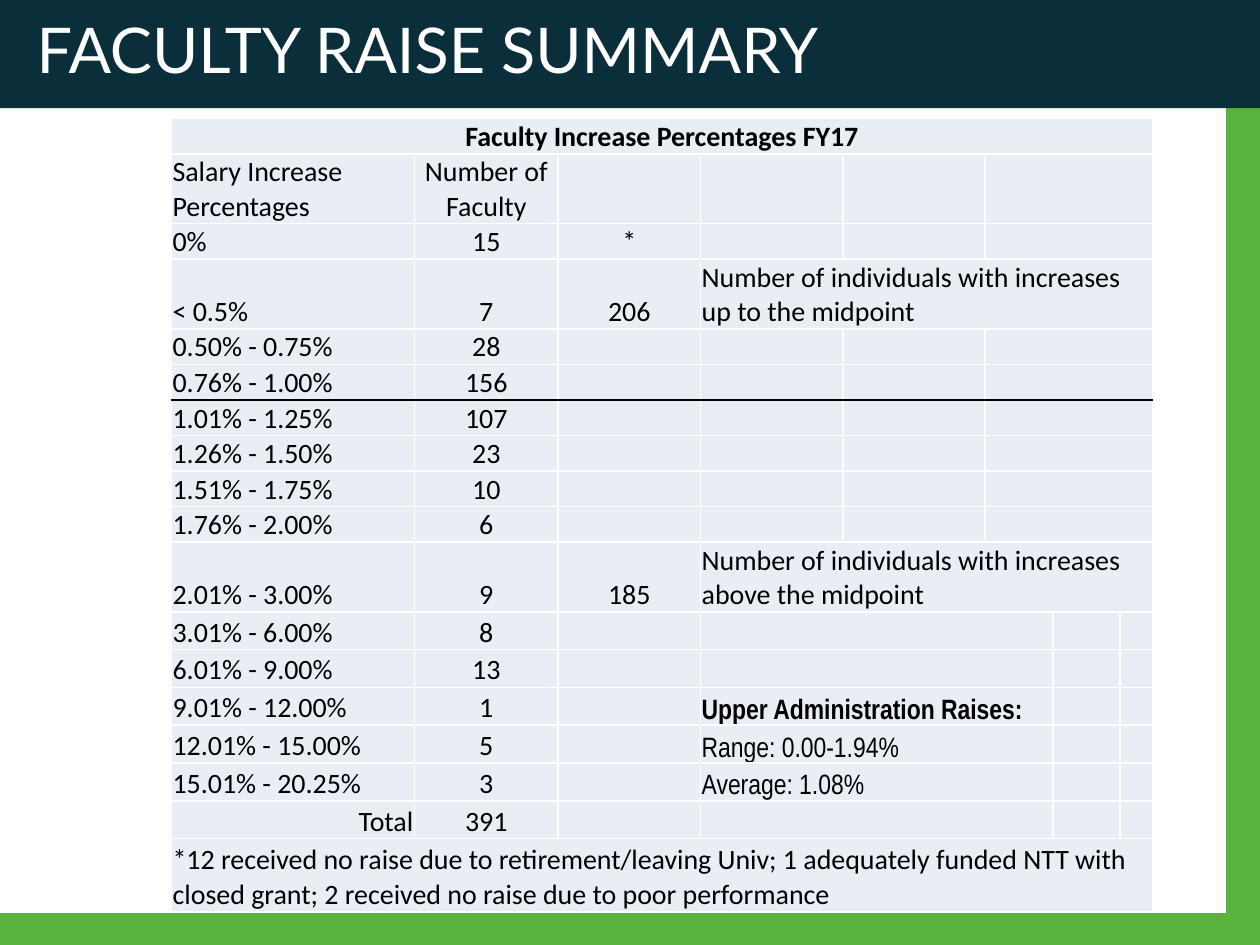
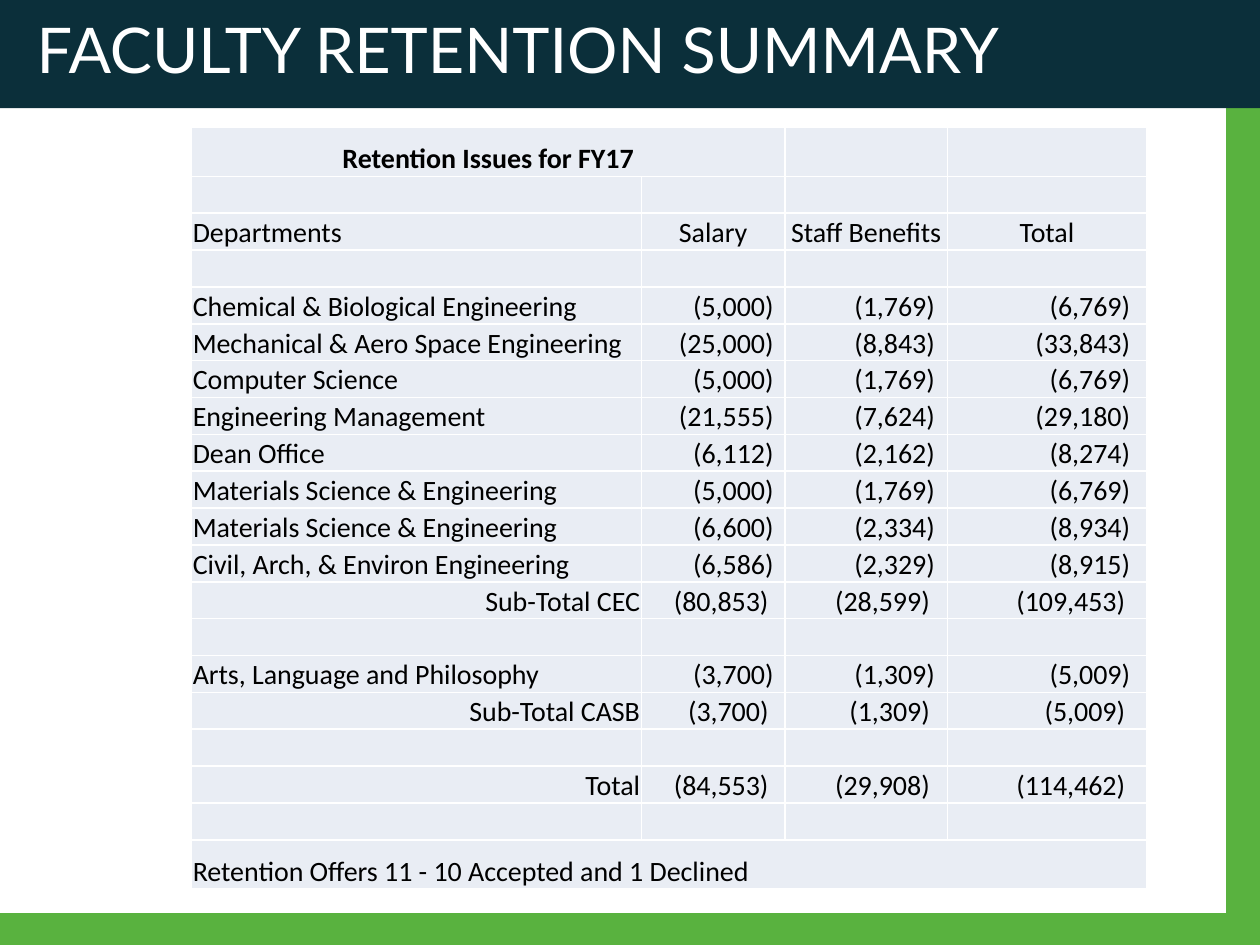
"""Build two slides of faculty raise and retention tables."""
from lxml.etree import SubElement
from pptx import Presentation
from pptx.dml.color import RGBColor
from pptx.enum.shapes import MSO_SHAPE as SHAPE
from pptx.enum.text import MSO_ANCHOR as ANCHOR, MSO_AUTO_SIZE as AUTO, PP_ALIGN as ALIGN
from pptx.oxml.ns import qn
from pptx.util import Inches, Pt

NAVY, GREEN, WHITE, BLACK, CELL = "0B2F3A", "59B23F", "FFFFFF", "000000", "E9EDF4"


def rgb(color):
    """Turn a hex string into a colour."""
    return RGBColor.from_string(color)


def add_table_slide(title, left, top, cols, heights, rows, spans, rule_row=None):
    """Add a titled slide with a table; spans maps a row to (first, last) merged columns."""
    s = prs.slides.add_slide(layout)
    sp = s.shapes.title
    sp.left, sp.top, sp.width, sp.height = (Inches(n) for n in (0.19, 0.03, 9, 1.06))
    tf = sp.text_frame
    tf.text, tf.auto_size, tf.vertical_anchor = title, AUTO.NONE, ANCHOR.TOP
    p = tf.paragraphs[0]
    p.alignment = ALIGN.LEFT
    p.font.name, p.font.size, p.font.color.rgb = "Lato", Pt(36), rgb(WHITE)

    table = s.shapes.add_table(len(rows), len(cols), Inches(left), Inches(top),
                               Inches(sum(cols)), Inches(sum(heights))).table
    table.first_row = table.horz_banding = False
    for column, width in zip(table.columns, cols):
        column.width = Inches(width)
    for r, (row, height) in enumerate(zip(rows, heights)):
        table.rows[r].height = Inches(height)
        for c in range(len(cols)):
            cell = table.cell(r, c)
            cell.margin_left = cell.margin_right = cell.margin_top = Inches(0.01)
            cell.margin_bottom = 0
            cell.vertical_anchor = ANCHOR.BOTTOM
            for side in "LRTB":
                ruled = (side, r) in (("B", rule_row), ("T", (rule_row or -2) + 1))
                ln = SubElement(cell._tc.get_or_add_tcPr(), qn(f"a:ln{side}"), w=str(Pt(1)))
                fill = SubElement(ln, qn("a:solidFill"))
                SubElement(fill, qn("a:srgbClr"), val=BLACK if ruled else WHITE)
            cell.fill.solid()
            cell.fill.fore_color.rgb = rgb(CELL)
            p = cell.text_frame.paragraphs[0]
            if c < len(row) and row[c]:
                cell.text = row[c]
                p = cell.text_frame.paragraphs[0]
                p.alignment = ALIGN.CENTER if c in (1, 2) or r == 0 else ALIGN.LEFT
                p.font.name, p.font.size, p.font.bold = "Calibri", Pt(16), r == 0
                p.font.color.rgb = rgb(BLACK)
            else:
                SubElement(p._p, qn("a:endParaRPr"), sz="1600")
        if r in spans:
            first, last = spans[r]
            table.cell(r, first).merge(table.cell(r, last))
    return s, table


prs = Presentation()
prs.slide_width, prs.slide_height = Inches(10), Inches(7.5)
layout = prs.slide_layouts[5]
for sp in list(layout.placeholders)[1:]:
    sp.element.getparent().remove(sp.element)

raises = [
    ["Faculty Increase Percentages FY17"],
    ["Salary Increase Percentages", "Number of Faculty"],
    ["0%", "15", "*"],
    ["< 0.5%", "7", "206", "Number of individuals with increases up to the midpoint"],
    ["0.50% - 0.75%", "28"],
    ["0.76% - 1.00%", "156"],
    ["1.01% - 1.25%", "107"],
    ["1.26% - 1.50%", "23"],
    ["1.51% - 1.75%", "10"],
    ["1.76% - 2.00%", "6"],
    ["2.01% - 3.00%", "9", "185", "Number of individuals with increases above the midpoint"],
    ["3.01% - 6.00%", "8"],
    ["6.01% - 9.00%", "13"],
    ["9.01% - 12.00%", "1", "", "Upper Administration Raises:"],
    ["12.01% - 15.00%", "5", "", "Range: 0.00-1.94%"],
    ["15.01% - 20.25%", "3", "", "Average: 1.08%"],
    ["Total", "391"],
    ["*12 received no raise due to retirement/leaving Univ; 1 adequately funded NTT "
     "with closed grant; 2 received no raise due to poor performance"],
]
spans = {r: (5, 7) for r in range(1, 10)}
spans |= {r: (3, 5) for r in range(11, 17)}
spans |= {0: (0, 7), 3: (3, 7), 10: (3, 7), 17: (0, 7)}
heights = [0.27] * 11 + [0.3] * 6 + [0.58]
for r in (1, 3, 10):
    heights[r] = 0.53
s, table = add_table_slide("FACULTY RAISE SUMMARY", 1.36, 0.94,
                           [1.93, 1.14, 1.13, 1.13, 1.13, 0.54, 0.53, 0.26],
                           heights, raises, spans, rule_row=5)
table.cell(16, 0).text_frame.paragraphs[0].alignment = ALIGN.RIGHT
for r in (13, 14, 15):
    p = table.cell(r, 3).text_frame.paragraphs[0]
    p.font.name, p.font.bold = "Arial Narrow", r == 13

frame = s.shapes.add_shape(SHAPE.CORNER, 0, 0, Inches(10.01), Inches(7.51))
frame.element.spPr.xfrm.set("flipH", "1")
frame.adjustments[0], frame.adjustments[1] = 0.035, 0.037
band = s.shapes.add_shape(SHAPE.RECTANGLE, 0, 0, Inches(10.01), Inches(0.86))
for i, (sp, color) in enumerate([(frame, GREEN), (band, NAVY)]):
    sp.shadow.inherit = False
    sp.fill.solid()
    sp.fill.fore_color.rgb = rgb(color)
    sp.line.fill.background()
    layout.shapes._spTree.insert(2 + i, sp.element)

retention = [
    ["Retention Issues for FY17"],
    [],
    ["Departments", "Salary", "Staff Benefits", "Total"],
    [],
    ["Chemical & Biological Engineering", "(5,000)", "(1,769)", "(6,769)"],
    ["Mechanical & Aero Space Engineering", "(25,000)", "(8,843)", "(33,843)"],
    ["Computer Science", "(5,000)", "(1,769)", "(6,769)"],
    ["Engineering Management", "(21,555)", "(7,624)", "(29,180)"],
    ["Dean Office", "(6,112)", "(2,162)", "(8,274)"],
    ["Materials Science & Engineering", "(5,000)", "(1,769)", "(6,769)"],
    ["Materials Science & Engineering", "(6,600)", "(2,334)", "(8,934)"],
    ["Civil, Arch, & Environ Engineering", "(6,586)", "(2,329)", "(8,915)"],
    ["Sub-Total CEC", "(80,853)", "(28,599)", "(109,453)"],
    [],
    ["Arts, Language and Philosophy", "(3,700)", "(1,309)", "(5,009)"],
    ["Sub-Total CASB", "(3,700)", "(1,309)", "(5,009)"],
    [],
    ["Total", "(84,553)", "(29,908)", "(114,462)"],
    [],
    ["Retention Offers 11 - 10 Accepted and 1 Declined"],
]
heights = [0.39] + [(6.05 - 2 * 0.39) / 18] * 18 + [0.39]
s, table = add_table_slide("FACULTY RETENTION SUMMARY", 1.52, 1.01, [3.57, 1.14, 1.29, 1.58],
                           heights, retention, {0: (0, 1), 19: (0, 3)})
table.cell(2, 3).text_frame.paragraphs[0].alignment = ALIGN.CENTER
for r, row in enumerate(retention):
    if r < 4 or len(row) < 4:
        continue
    is_sum = "Total" in row[0]
    if is_sum:
        table.cell(r, 0).text_frame.paragraphs[0].alignment = ALIGN.RIGHT
    for c, indent in enumerate((0.09, 0.1, 0.13), 1):
        cell = table.cell(r, c)
        cell.margin_right = Inches(indent + 0.04 * is_sum)
        cell.text_frame.paragraphs[0].alignment = ALIGN.RIGHT

prs.save("out.pptx")
